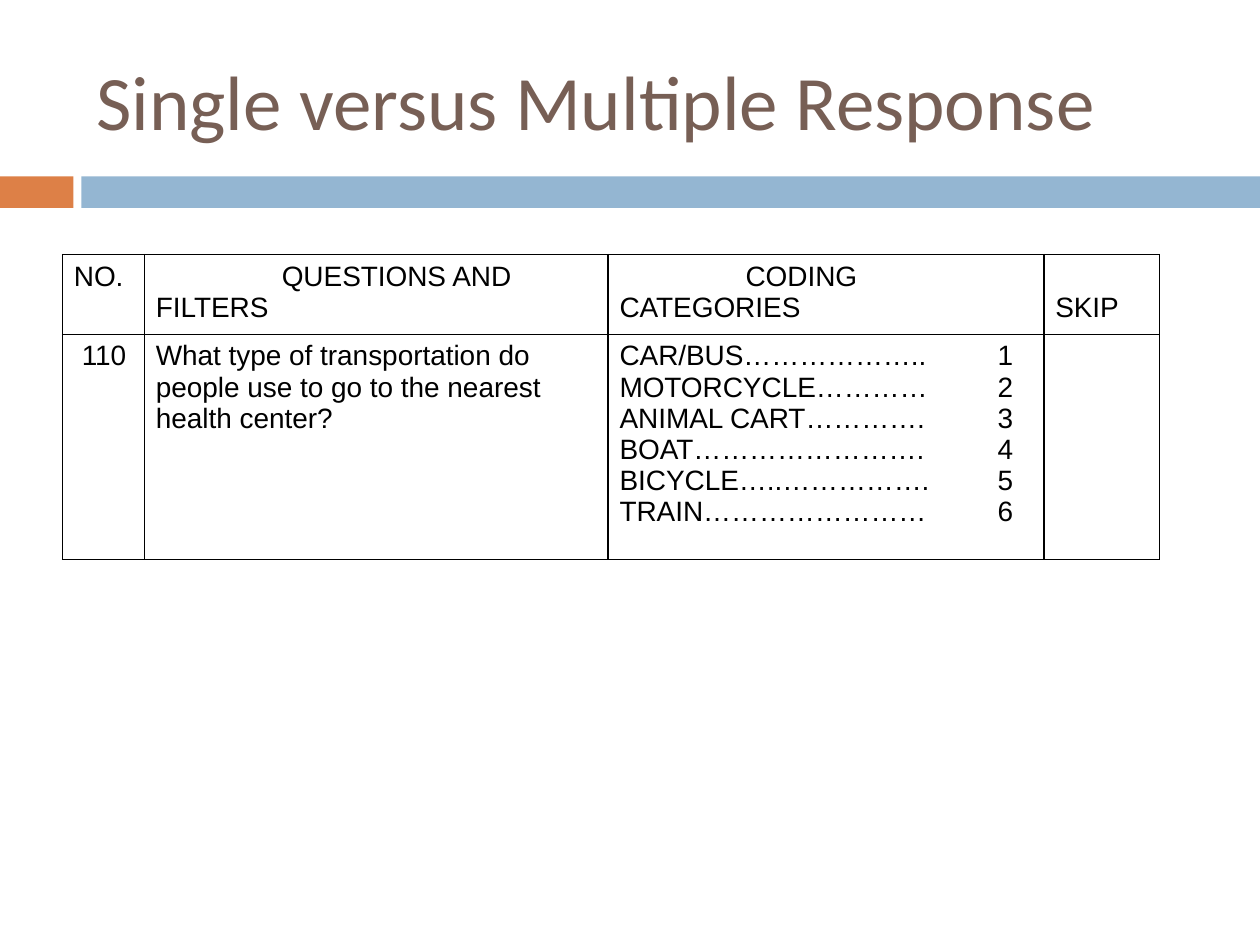
"""Build the slide about single versus multiple response questions."""
from lxml import etree
from pptx import Presentation
from pptx.dml.color import RGBColor
from pptx.enum.shapes import MSO_SHAPE
from pptx.enum.text import MSO_ANCHOR
from pptx.oxml.ns import qn
from pptx.util import Pt

RECTANGLE = MSO_SHAPE.RECTANGLE
MIDDLE = MSO_ANCHOR.MIDDLE


def color(hex_value):
    return RGBColor.from_string(hex_value)


def add_borders(cell):
    properties = cell._tc.get_or_add_tcPr()
    for position, side in enumerate(("lnL", "lnR", "lnT", "lnB")):
        line = etree.Element(qn(f"a:{side}"), w=str(Pt(1)))
        fill = etree.SubElement(line, qn("a:solidFill"))
        etree.SubElement(fill, qn("a:srgbClr"), val="000000")
        properties.insert(position, line)


prs = Presentation()
prs.slide_width, prs.slide_height = Pt(720), Pt(540)
slide = prs.slides.add_slide(prs.slide_layouts[6])

for left, width, band_color in ((0, 42, "DD8047"), (46.5, 673.5, "94B6D2")):
    band = slide.shapes.add_shape(RECTANGLE, Pt(left), Pt(100.8), Pt(width), Pt(18))
    band.shadow.inherit = False
    band.fill.solid()
    band.fill.fore_color.rgb = color(band_color)
    band.line.fill.background()

title = slide.shapes.add_textbox(Pt(48), Pt(18), Pt(642), Pt(78)).text_frame
title.word_wrap = True
title.vertical_anchor = MIDDLE
title.text = "Single versus Multiple Response"
title_font = title.paragraphs[0].runs[0].font
title_font.name, title_font.size = "Calibri", Pt(44)
title_font.color.rgb = color("775F55")

answers = (
    "CAR/BUS………………..",
    "MOTORCYCLE…………",
    "ANIMAL CART………….",
    "BOAT…………………….",
    "BICYCLE…..…………….",
    "TRAIN……………………",
)
coding = "\n".join(f"{answer}\t{code}" for code, answer in enumerate(answers, 1))
question = "What type of transportation do people use to go to the nearest health center?"
rows = (
    ("NO.", "\tQUESTIONS AND FILTERS", "\tCODING CATEGORIES", "\tSKIP"),
    ("110", question, coding, ""),
)
column_widths = (46.8, 265, 249, 66.2)
row_heights = (41.5, 128.5)
tab_stops = (72, 216)

questionnaire = slide.shapes.add_table(
    len(rows), len(column_widths), Pt(35.75), Pt(145.5),
    Pt(sum(column_widths)), Pt(sum(row_heights))).table
questionnaire.first_row = False
questionnaire.horz_banding = False
for column, width in zip(questionnaire.columns, column_widths):
    column.width = Pt(width)

for row, height, texts, tab_stop in zip(questionnaire.rows, row_heights, rows, tab_stops):
    row.height = Pt(height)
    for cell, text in zip(row.cells, texts):
        cell.fill.background()
        add_borders(cell)
        cell.margin_left = cell.margin_right = Pt(6.5)
        cell.margin_top = cell.margin_bottom = Pt(3.6)
        cell.text_frame.text = text
        for paragraph in cell.text_frame.paragraphs:
            if "\t" in paragraph.text:
                tabs = etree.SubElement(paragraph._p.get_or_add_pPr(), qn("a:tabLst"))
                etree.SubElement(tabs, qn("a:tab"), pos=str(Pt(tab_stop)), algn="l")
            for run in paragraph.runs:
                run.font.name, run.font.size = "Arial", Pt(16)
                run.font.color.rgb = color("000000")

number = questionnaire.cell(1, 0).text_frame.paragraphs[0]
number._p.get_or_add_pPr().set("indent", str(Pt(4.5)))

prs.save("out.pptx")
